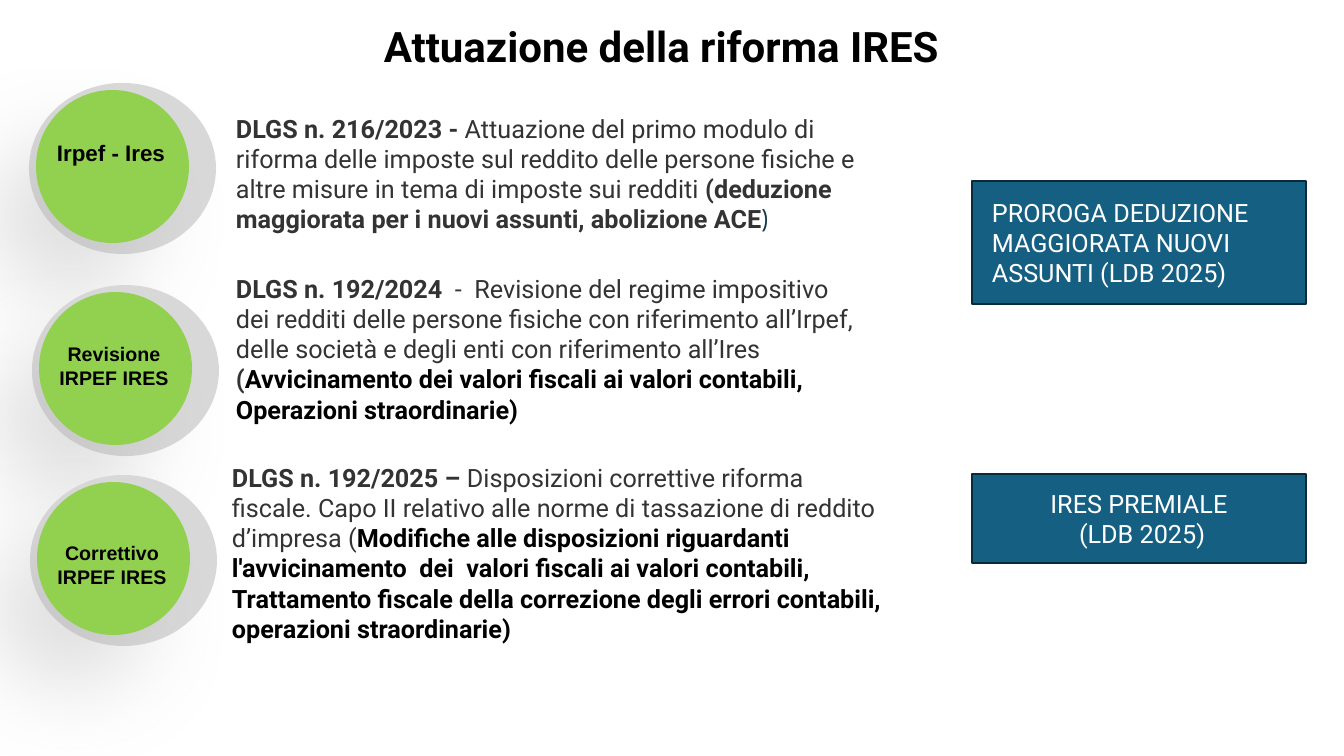
from lxml import etree
from pptx import Presentation
from pptx.dml.color import RGBColor
from pptx.enum.shapes import MSO_SHAPE
from pptx.enum.text import MSO_ANCHOR, MSO_AUTO_SIZE, PP_ALIGN
from pptx.oxml import parse_xml
from pptx.util import Pt

OVAL, RECT = MSO_SHAPE.OVAL, MSO_SHAPE.RECTANGLE
LEFT, CENTER = PP_ALIGN.LEFT, PP_ALIGN.CENTER
MIDDLE, GROW = MSO_ANCHOR.MIDDLE, MSO_AUTO_SIZE.SHAPE_TO_FIT_TEXT
PX = 914400 / 100.8
COLORS = {"black": "000000", "white": "FFFFFF", "text": "333333", "navy": "10374B",
          "ring": "D9D9D9", "disc": "92D050", "shadow": "AEAEAE",
          "box": "156082", "border": "092A39"}
A = "http://schemas.openxmlformats.org/drawingml/2006/main"

prs = Presentation()
prs.slide_width, prs.slide_height = round(1344 * PX), round(756 * PX)
slide = prs.slides.add_slide(prs.slide_layouts[6])


def add_block(left, top, width, height, shape=None, fill=None):
    area = [round(v * PX) for v in (left, top, width, height)]
    if shape is None:
        block = slide.shapes.add_textbox(*area)
        block.text_frame.auto_size = GROW
    else:
        block = slide.shapes.add_shape(shape, *area)
        block.shadow.inherit = False
        block.fill.solid()
        block.fill.fore_color.rgb = RGBColor.from_string(COLORS[fill])
        block.line.fill.background()
    block.text_frame.word_wrap = True
    return block


def style(run, size, color, bold=False, font="Roboto"):
    run.font.name, run.font.size, run.font.bold = font, Pt(size), bold
    run.font.color.rgb = RGBColor.from_string(COLORS[color])


# Title
title = add_block(115, 13, 1093, 60).text_frame.paragraphs[0]
title.text = "Attuazione della riforma IRES"
title.alignment, title.line_spacing, title.space_after = CENTER, 1.05, Pt(8)
style(title.runs[0], 30, "black", True)

# Round badges: ring, shaded disc and label
badges = [
    (29, 83, "Irpef - Ires", 16, 51, 37),
    (32, 285, "Revisione IRPEF IRES", 14, 52, 57),
    (30, 475, "Correttivo IRPEF IRES", 14, 61, 57),
]
for left, top, name, size, label_drop, label_height in badges:
    add_block(left, top, 187, 171, OVAL, "ring")
    disc = add_block(left + 7, top + 7, 153, 153, OVAL, "disc")
    effects = disc.fill._xPr.find(f"{{{A}}}effectLst")
    effects.append(parse_xml(
        f'<a:outerShdw xmlns:a="{A}" blurRad="{Pt(63)}" dist="{Pt(48)}" '
        f'dir="{130 * 60000}" algn="ctr" rotWithShape="0">'
        f'<a:srgbClr val="{COLORS["shadow"]}"><a:alpha val="39000"/></a:srgbClr>'
        '</a:outerShdw>'))
    label = add_block(left + 3, top + label_drop, 158, label_height).text_frame.paragraphs[0]
    label.text = name
    label.alignment = CENTER
    style(label.runs[0], size, "black", True, "Arial")

# Decrees: each part is text, colour, bold, font
decrees = [
    ((226, 108, 640, 132), [
        ("DLGS n. 216/2023 -", "text", True, "Roboto"),
        (" Attuazione del primo modulo di riforma delle imposte sul reddito delle "
         "persone fisiche e altre misure in tema di imposte sui redditi ",
         "text", False, "Roboto"),
        ("(deduzione maggiorata per i nuovi assunti, abolizione ACE", "text", True, "Roboto"),
        (")", "navy", False, "Cabin"),
    ]),
    ((226, 268, 640, 163), [
        ("DLGS n. 192/2024 ", "text", True, "Roboto"),
        (" -  Revisione del regime impositivo dei redditi delle persone fisiche con "
         "riferimento all’Irpef, delle società e degli enti con riferimento all’Ires ",
         "text", False, "Roboto"),
        ("(", "text", True, "Roboto"),
        ("Avvicinamento dei valori fiscali ai valori contabili, "
         "Operazioni straordinarie)", "black", True, "Roboto"),
    ]),
    ((222, 457, 670, 194), [
        ("DLGS n. 192/2025 – ", "text", True, "Roboto"),
        ("Disposizioni correttive riforma fiscale. Capo II relativo alle norme di "
         "tassazione di reddito d’impresa (", "text", False, "Roboto"),
        ("Modifiche alle disposizioni riguardanti l'avvicinamento  dei  valori fiscali "
         "ai valori contabili, Trattamento fiscale della correzione degli errori "
         "contabili, operazioni straordinarie)", "black", True, "Roboto"),
    ]),
]
for area, parts in decrees:
    decree = add_block(*area).text_frame.paragraphs[0]
    for words, color, bold, font in parts:
        run = decree.add_run()
        run.text = words
        style(run, 18, color, bold, font)

# Budget law boxes
measures = [
    (181, 123, LEFT, "PROROGA DEDUZIONE MAGGIORATA NUOVI ASSUNTI (LDB 2025)"),
    (474, 89, CENTER, "IRES PREMIALE\n (LDB 2025)"),
]
for top, height, align, words in measures:
    measure = add_block(972, top, 334, height, RECT, "box")
    measure.line.color.rgb = RGBColor.from_string(COLORS["border"])
    measure.line.width = Pt(1.5)
    measure.text_frame.text = words
    measure.text_frame.vertical_anchor = MIDDLE
    for paragraph in measure.text_frame.paragraphs:
        paragraph.alignment = align
        if align == LEFT:
            paragraph.level = 1
            paragraph._p.get_or_add_pPr().set("marL", str(round(10 * PX)))
        style(paragraph.runs[0], 18, "white")

prs.save("out.pptx")
